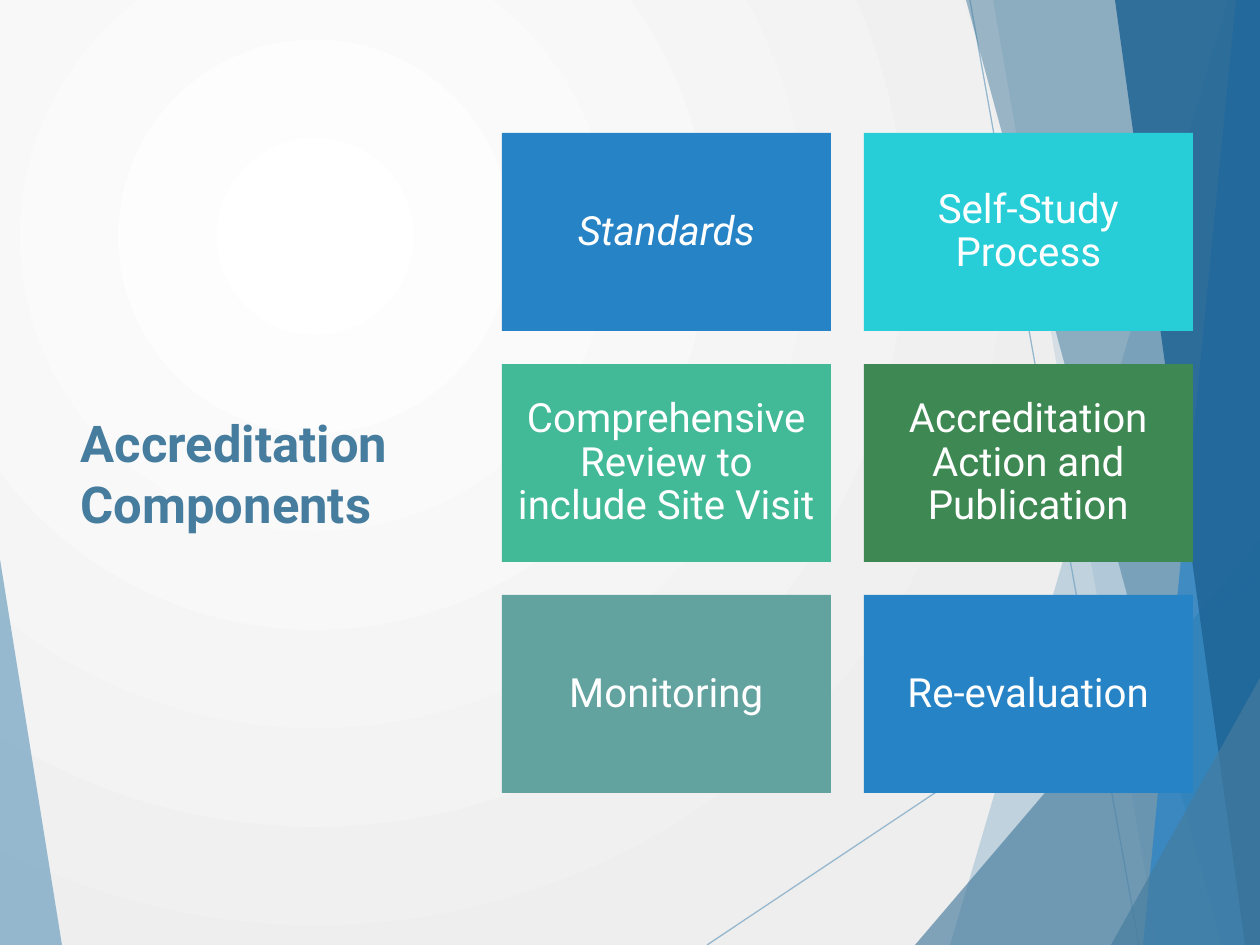
from dataclasses import dataclass

import pptx
import pptx.dml.color
import pptx.enum.shapes
import pptx.enum.text
import pptx.oxml
import pptx.oxml.ns
import pptx.util

PX = 914400 / 126
FONT = "Roboto"
qn = pptx.oxml.ns.qn
Point = tuple[int, int]


@dataclass
class Facet:
    points: list[Point]
    color: str
    opacity: int


@dataclass
class Ray:
    start: Point
    end: Point


@dataclass
class Card:
    text: str
    color: str
    italic: bool = False


LEFT_FACET = Facet([(0, 559), (62, 945), (0, 945)], "70A1C0", 70)
RAYS = [Ray((707, 945), (1260, 576)), Ray((970, 0), (1139, 945))]
RIGHT_FACETS = [
    Facet([(1228, 0), (950, 945), (1260, 945), (1260, 0)], "70A1C0", 36),
    Facet([(993, 0), (1158, 945), (1260, 945), (1260, 0)], "70A1C0", 20),
    Facet([(915, 945), (1260, 541), (1260, 945)], "467C9E", 66),
    Facet([(966, 0), (1222, 945), (1260, 945), (1260, 0)], "467C9E", 50),
    Facet([(1236, 0), (1143, 945), (1260, 945), (1260, 0)], "2683C6", 70),
    Facet([(1115, 0), (1245, 945), (1260, 945), (1260, 0)], "1D6294", 82),
    Facet([(1111, 945), (1260, 678), (1260, 945)], "467C9E", 66),
]
CARDS = [
    Card("Standards", "2683C6", italic=True),
    Card("Self-Study Process", "27CED7"),
    Card("Comprehensive Review to include Site Visit", "42BA97"),
    Card("Accreditation Action and Publication", "3E8853"),
    Card("Monitoring", "62A39F"),
    Card("Re-evaluation", "2683C6"),
]
COLUMNS = 2
GRID_LEFT, GRID_TOP = 502, 133
CARD_W, CARD_H, GAP = 329, 198, 33


def emu(px: int) -> int:
    return round(px * PX)


def rgb(color: str) -> pptx.dml.color.RGBColor:
    return pptx.dml.color.RGBColor.from_string(color)


def set_opacity(element, percent: int) -> None:
    """Make every RGB colour inside the element partly transparent."""
    for color in element.iter(qn("a:srgbClr")):
        alpha = pptx.oxml.parse_xml(
            f'<a:alpha {pptx.oxml.ns.nsdecls("a")} val="{percent * 1000}"/>')
        color.append(alpha)


def set_background(s) -> None:
    """Fill the slide with a circular gradient centred in its upper left."""
    fill = s.background.fill
    fill.gradient()
    for stop, color in zip(fill.gradient_stops, ("FFFFFF", "EEEEEE")):
        stop.color.rgb = rgb(color)
    grad = s.element.find(".//" + qn("a:gradFill"))
    grad.remove(grad.find(qn("a:lin")))
    grad.append(pptx.oxml.parse_xml(
        f'<a:path {pptx.oxml.ns.nsdecls("a")} path="circle">'
        '<a:fillToRect l="50000" t="50000" r="100000" b="100000"/></a:path>'))


def draw_facet(s, facet: Facet) -> None:
    builder = s.shapes.build_freeform(*facet.points[0], scale=PX)
    builder.add_line_segments(facet.points[1:], close=True)
    sp = builder.convert_to_shape()
    sp.shadow.inherit = False
    sp.fill.solid()
    sp.fill.fore_color.rgb = rgb(facet.color)
    set_opacity(sp.element.spPr, facet.opacity)
    sp.line.fill.background()


def draw_ray(s, ray: Ray) -> None:
    line = s.shapes.add_connector(
        pptx.enum.shapes.MSO_CONNECTOR.STRAIGHT,
        *map(emu, ray.start + ray.end))
    line.line.color.rgb = rgb("70A1C0")
    line.line.width = pptx.util.Pt(0.75)
    sp_pr = line.element.spPr
    set_opacity(sp_pr, 70)
    sp_pr.append(pptx.oxml.parse_xml(
        f'<a:effectLst {pptx.oxml.ns.nsdecls("a")}/>'))


def write(sp, text: str, size: int, color: str,
          align=pptx.enum.text.PP_ALIGN.LEFT,
          bold: bool = False, italic: bool = False) -> None:
    tf = sp.text_frame
    tf.text = text
    tf.word_wrap = True
    tf.auto_size = pptx.enum.text.MSO_AUTO_SIZE.NONE
    tf.vertical_anchor = pptx.enum.text.MSO_ANCHOR.MIDDLE
    p = tf.paragraphs[0]
    p.alignment = align
    font = p.runs[0].font
    font.name = FONT
    font.size = pptx.util.Pt(size)
    font.color.rgb = rgb(color)
    font.bold = bold
    font.italic = italic


def draw_card(s, card: Card, index: int) -> None:
    row, column = divmod(index, COLUMNS)
    left = GRID_LEFT + column * (CARD_W + GAP)
    top = GRID_TOP + row * (CARD_H + GAP)
    sp = s.shapes.add_shape(
        pptx.enum.shapes.MSO_SHAPE.RECTANGLE,
        *map(emu, (left, top, CARD_W, CARD_H)))
    sp.shadow.inherit = False
    sp.fill.solid()
    sp.fill.fore_color.rgb = rgb(card.color)
    sp.line.fill.background()
    write(sp, card.text, 23, "FFFFFF",
          pptx.enum.text.PP_ALIGN.CENTER, italic=card.italic)
    tf = sp.text_frame
    tf.margin_left = tf.margin_right = pptx.util.Inches(0.1)
    tf.margin_top = tf.margin_bottom = pptx.util.Inches(0.1)
    tf.paragraphs[0].line_spacing = 0.9


def main() -> None:
    prs = pptx.Presentation()
    prs.slide_width, prs.slide_height = emu(1260), emu(945)
    s = prs.slides.add_slide(prs.slide_layouts[5])
    set_background(s)

    draw_facet(s, LEFT_FACET)
    for ray in RAYS:
        draw_ray(s, ray)
    for facet in RIGHT_FACETS:
        draw_facet(s, facet)

    title = s.shapes.title
    title.left, title.top, title.width, title.height = map(
        emu, (68, 191, 367, 564))
    write(title, "Accreditation Components", 29, "467C9E", bold=True)

    for index, card in enumerate(CARDS):
        draw_card(s, card, index)
    prs.save("out.pptx")


if __name__ == "__main__":
    main()
